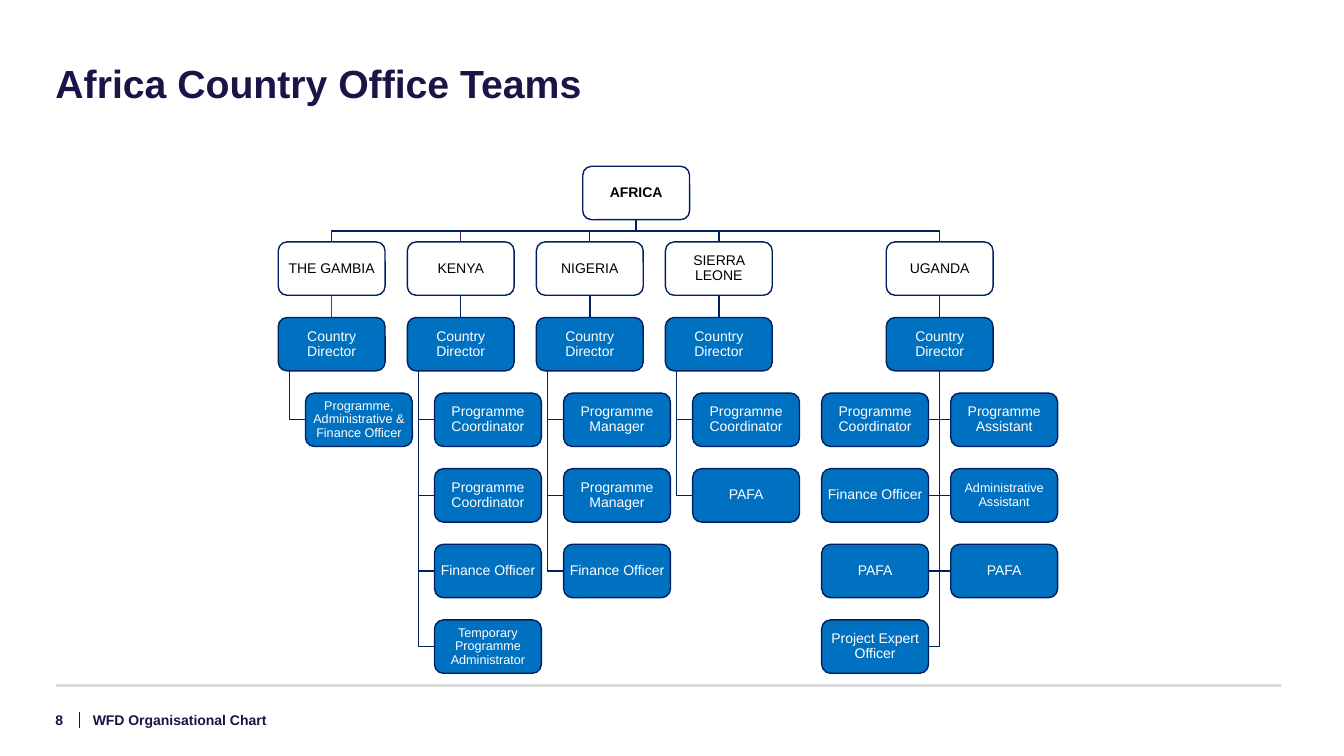
from lxml import etree
from pptx import Presentation
from pptx.dml.color import RGBColor
from pptx.enum.shapes import MSO_CONNECTOR, MSO_SHAPE
from pptx.enum.text import MSO_ANCHOR, PP_ALIGN
from pptx.oxml.ns import qn
from pptx.util import Inches, Pt

ROUND = MSO_SHAPE.ROUNDED_RECTANGLE
STRAIGHT = MSO_CONNECTOR.STRAIGHT
TOP, MIDDLE = MSO_ANCHOR.TOP, MSO_ANCHOR.MIDDLE
LEFT, CENTER = PP_ALIGN.LEFT, PP_ALIGN.CENTER

COLORS = {
    "ink": "1E1246", "rule": "D9D9D9", "navy": "002060", "blue": "0070C0",
    "plum": "5F286F", "grape": "6C2D7D", "black": "000000", "white": "FFFFFF",
}
FONT = "Arial"
WIDTH, HEIGHT = 1.06, 0.53
FIRST, PITCH = 1.65, 0.75
ROOT = 5.78
INDENT, TRUNK, SPREAD = 0.27, 0.11, 0.64
SMALL = {
    "Programme, Administrative & Finance Officer",
    "Temporary Programme Administrator",
    "Administrative Assistant",
}
TEAMS = [
    ("THE GAMBIA", 2.76, "navy", "grape",
     [["Programme, Administrative & Finance Officer"]]),
    ("KENYA", 4.04, "plum", "navy",
     [["Programme Coordinator"], ["Programme Coordinator"],
      ["Finance Officer"], ["Temporary Programme Administrator"]]),
    ("NIGERIA", 5.32, "navy", "navy",
     [["Programme Manager"], ["Programme Manager"], ["Finance Officer"]]),
    ("SIERRA LEONE", 6.6, "navy", "navy",
     [["Programme Coordinator"], ["PAFA"]]),
    ("UGANDA", 8.79, "navy", "navy",
     [["Programme Coordinator", "Programme Assistant"],
      ["Finance Officer", "Administrative Assistant"],
      ["PAFA", "PAFA"], ["Project Expert Officer"]]),
]


def rgb(name):
    return RGBColor.from_string(COLORS[name])


def row_top(row):
    return FIRST + PITCH * row


def write(shape, text, size, color, bold=False, align=LEFT, anchor=MIDDLE,
          inset=0.0, spacing=1.0):
    frame = shape.text_frame
    frame.word_wrap = True
    frame.vertical_anchor = anchor
    frame.margin_left = frame.margin_right = Inches(inset)
    frame.margin_top = frame.margin_bottom = Inches(inset)
    para = frame.paragraphs[0]
    para.text = text
    para.alignment = align
    para.line_spacing = spacing
    para.font.name = FONT
    para.font.size = Pt(size)
    para.font.bold = bold
    para.font.color.rgb = rgb(color)


def add_label(slide, text, left, top, width, height, size, **style):
    box = slide.shapes.add_textbox(
        Inches(left), Inches(top), Inches(width), Inches(height))
    write(box, text, size, "ink", bold=True, **style)


def add_box(slide, text, left, row, fill=None, bold=False):
    box = slide.shapes.add_shape(
        ROUND, Inches(left), Inches(row_top(row)), Inches(WIDTH), Inches(HEIGHT))
    box.shadow.inherit = False
    if fill:
        box.fill.solid()
        box.fill.fore_color.rgb = rgb(fill)
    else:
        box.fill.background()
    box.line.color.rgb = rgb("navy")
    box.line.width = Pt(1)
    size = 9 if text in SMALL else 10
    write(box, text, size, "white" if fill else "black", bold, CENTER,
          inset=0.01, spacing=0.9)


def add_line(slide, start, end, color, width):
    line = slide.shapes.add_connector(
        STRAIGHT, *(Inches(value) for value in (*start, *end)))
    line.line.color.rgb = rgb(color)
    line.line.width = Pt(width)
    props = line._element.find(qn("p:spPr"))
    etree.SubElement(props, qn("a:effectLst"))


def add_elbow(slide, points, color):
    start, *rest = [(Inches(x), Inches(y)) for x, y in points]
    maker = slide.shapes.build_freeform(*start)
    maker.add_line_segments(rest, close=False)
    elbow = maker.convert_to_shape()
    elbow.shadow.inherit = False
    elbow.fill.background()
    elbow.line.color.rgb = rgb(color)
    elbow.line.width = Pt(1)


def role_left(left, paired, side):
    if paired:
        return left + (SPREAD if side else -SPREAD)
    return left + INDENT


def link_team(slide, left, branch, stem, roles):
    root, mid = ROOT + WIDTH / 2, left + WIDTH / 2
    base, top = row_top(0) + HEIGHT, row_top(1)
    bend = (base + top) / 2
    add_elbow(slide, [(root, base), (root, bend), (mid, bend), (mid, top)], branch)
    add_line(slide, (mid, top + HEIGHT), (mid, row_top(2)), stem, 1)
    paired = len(roles[0]) > 1
    trunk = mid if paired else left + TRUNK
    for row, names in enumerate(roles, 3):
        level = row_top(row) + HEIGHT / 2
        for side in range(len(names)):
            edge = role_left(left, paired, side)
            if paired and side == 0:
                edge += WIDTH
            add_elbow(slide, [(trunk, row_top(2) + HEIGHT), (trunk, level),
                              (edge, level)], "navy")


def fill_team(slide, country, left, roles):
    add_box(slide, country, left, 1)
    add_box(slide, "Country Director", left, 2, "blue")
    paired = len(roles[0]) > 1
    for row, names in enumerate(roles, 3):
        for side, name in enumerate(names):
            add_box(slide, name, role_left(left, paired, side), row, "blue")


def main():
    deck = Presentation()
    deck.slide_width, deck.slide_height = Inches(13.33), Inches(7.5)
    slide = deck.slides.add_slide(deck.slide_layouts[6])
    add_line(slide, (0.79, 7.06), (0.79, 7.22), "ink", 0.75)
    add_line(slide, (0.56, 6.8), (12.71, 6.8), "rule", 2)
    add_label(slide, "Africa Country Office Teams", 0.55, 0.64, 12.15, 1, 28,
              anchor=TOP, spacing=0.9)
    add_label(slide, "WFD Organisational Chart", 0.92, 7.02, 5.08, 0.24, 10)
    add_label(slide, "8", 0.55, 7.02, 0.37, 0.24, 10)
    for _, left, branch, stem, roles in reversed(TEAMS):
        link_team(slide, left, branch, stem, roles)
    add_box(slide, "AFRICA", ROOT, 0, bold=True)
    for country, left, _, _, roles in TEAMS:
        fill_team(slide, country, left, roles)
    deck.save("out.pptx")


if __name__ == "__main__":
    main()
